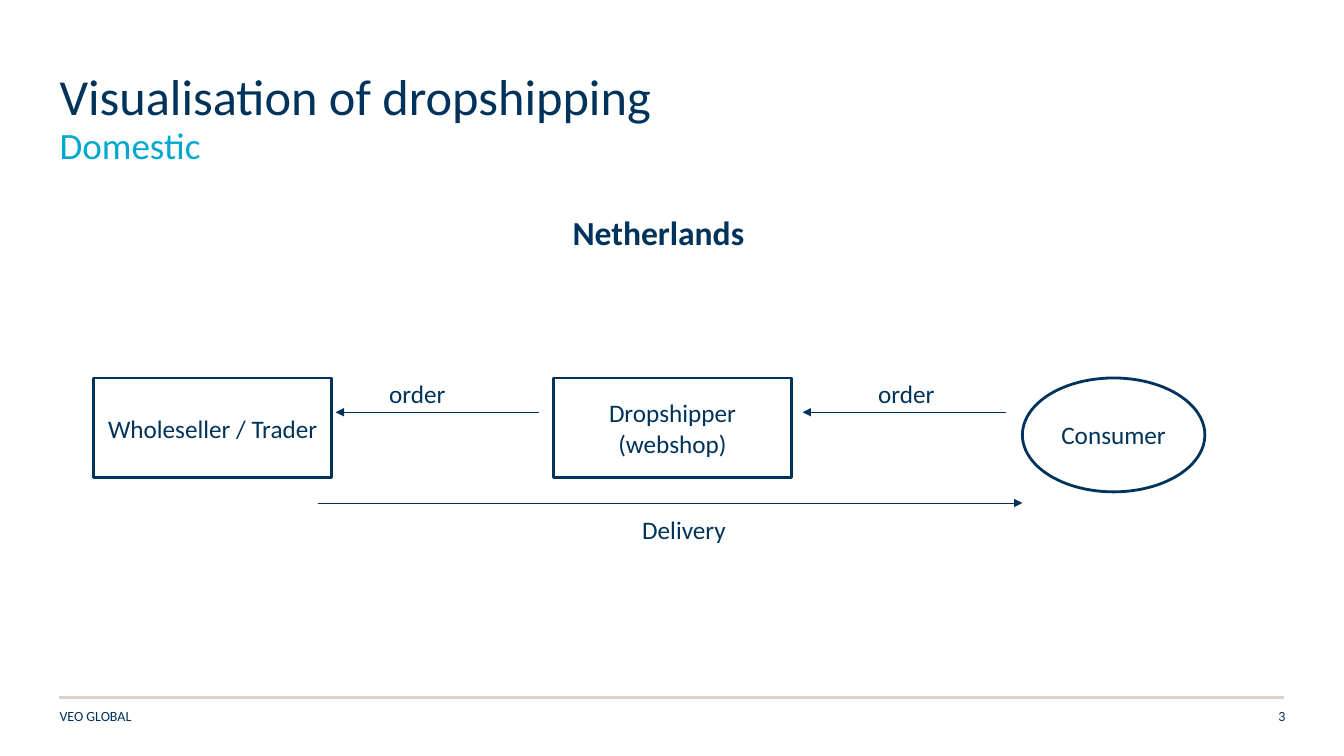
import pptx
import pptx.dml.color
import pptx.enum.shapes
import pptx.enum.text
import pptx.oxml.ns
import pptx.util
from lxml import etree

Inches = pptx.util.Inches
Pt = pptx.util.Pt
Shape = pptx.enum.shapes.MSO_SHAPE
Align = pptx.enum.text.PP_ALIGN
Anchor = pptx.enum.text.MSO_ANCHOR

NAVY = pptx.dml.color.RGBColor(0x00, 0x33, 0x5B)
CYAN = pptx.dml.color.RGBColor(0x00, 0xA7, 0xCE)
SAND = pptx.dml.color.RGBColor(0xD7, 0xD2, 0xCB)


class FlowSlide:
    """Draws the elements of a flow diagram on one slide in a shared style."""

    font_name = "Calibri"

    def __init__(self, presentation):
        self.slide = presentation.slides.add_slide(presentation.slide_layouts[5])
        self.shapes = self.slide.shapes

    def set_text(self, shape, text, size, color=NAVY, bold=False, align=Align.LEFT,
                 anchor=Anchor.TOP, inset=0, line_spacing=1.0):
        frame = shape.text_frame
        frame.text = text
        frame.word_wrap = True
        frame.auto_size = pptx.enum.text.MSO_AUTO_SIZE.NONE
        frame.vertical_anchor = anchor
        frame.margin_left = frame.margin_right = Inches(inset)
        frame.margin_top = frame.margin_bottom = Inches(inset / 2)
        paragraph = frame.paragraphs[0]
        paragraph.alignment = align
        paragraph.line_spacing = line_spacing
        paragraph.font.name = self.font_name
        paragraph.font.size = Pt(size)
        paragraph.font.bold = bold
        paragraph.font.color.rgb = color

    def title(self, text, left, top, width, height):
        heading = self.shapes.title
        heading.left, heading.top = Inches(left), Inches(top)
        heading.width, heading.height = Inches(width), Inches(height)
        self.set_text(heading, text, 36, line_spacing=0.9)

    def label(self, text, left, top, width, height, size=18, **style):
        box = self.shapes.add_textbox(
            Inches(left), Inches(top), Inches(width), Inches(height))
        self.set_text(box, text, size, **style)

    def party(self, kind, text, left, top, width, height):
        outline = self.shapes.add_shape(
            kind, Inches(left), Inches(top), Inches(width), Inches(height))
        outline.shadow.inherit = False
        outline.fill.background()
        outline.line.color.rgb = NAVY
        outline.line.width = Pt(2)
        self.set_text(outline, text, 18, align=Align.CENTER,
                      anchor=Anchor.MIDDLE, inset=0.1)

    def line(self, start, end, y, color=NAVY, width=0.5, arrow=True):
        connector = self.shapes.add_connector(
            pptx.enum.shapes.MSO_CONNECTOR.STRAIGHT,
            Inches(start), Inches(y), Inches(end), Inches(y))
        connector.line.color.rgb = color
        connector.line.width = Pt(width)
        properties = connector._element.spPr
        if arrow:
            etree.SubElement(properties.find(pptx.oxml.ns.qn("a:ln")),
                             pptx.oxml.ns.qn("a:tailEnd"), type="triangle")
        etree.SubElement(properties, pptx.oxml.ns.qn("a:effectLst"))


def main():
    presentation = pptx.Presentation()
    presentation.slide_width = Inches(13.33)
    presentation.slide_height = Inches(7.5)
    flow = FlowSlide(presentation)

    flow.line(0.59, 12.74, 6.92, color=SAND, width=2, arrow=False)
    flow.title("Visualisation of dropshipping", 0.59, 0.71, 12.15, 0.55)
    flow.label("Domestic", 0.59, 1.26, 12.15, 0.49, size=26.5, color=CYAN,
               line_spacing=0.9)
    flow.label("VEO GLOBAL", 0.59, 6.99, 5.12, 0.2, size=10, anchor=Anchor.BOTTOM)
    flow.label("3", 11.96, 6.99, 0.79, 0.2, size=10, align=Align.RIGHT,
               anchor=Anchor.BOTTOM)
    flow.label("Netherlands", 4.34, 2.1, 4.38, 0.66, size=24, bold=True,
               align=Align.CENTER, inset=0.1, line_spacing=0.9)

    flow.party(Shape.RECTANGLE, "Wholeseller / Trader", 0.93, 3.75, 2.36, 0.99)
    flow.party(Shape.RECTANGLE, "Dropshipper (webshop)", 5.49, 3.75, 2.36, 0.99)
    flow.party(Shape.OVAL, "Consumer", 10.14, 3.75, 1.81, 1.13)

    for order_start, order_end, order_left in ((9.98, 7.96, 8.71), (5.35, 3.33, 3.86)):
        flow.line(order_start, order_end, 4.09)
        flow.label("order", order_left, 3.75, 1.27, 0.23)
    flow.line(3.15, 10.14, 4.99)
    flow.label("Delivery", 6.37, 5.1, 1.27, 0.23)

    presentation.save("out.pptx")


if __name__ == "__main__":
    main()
